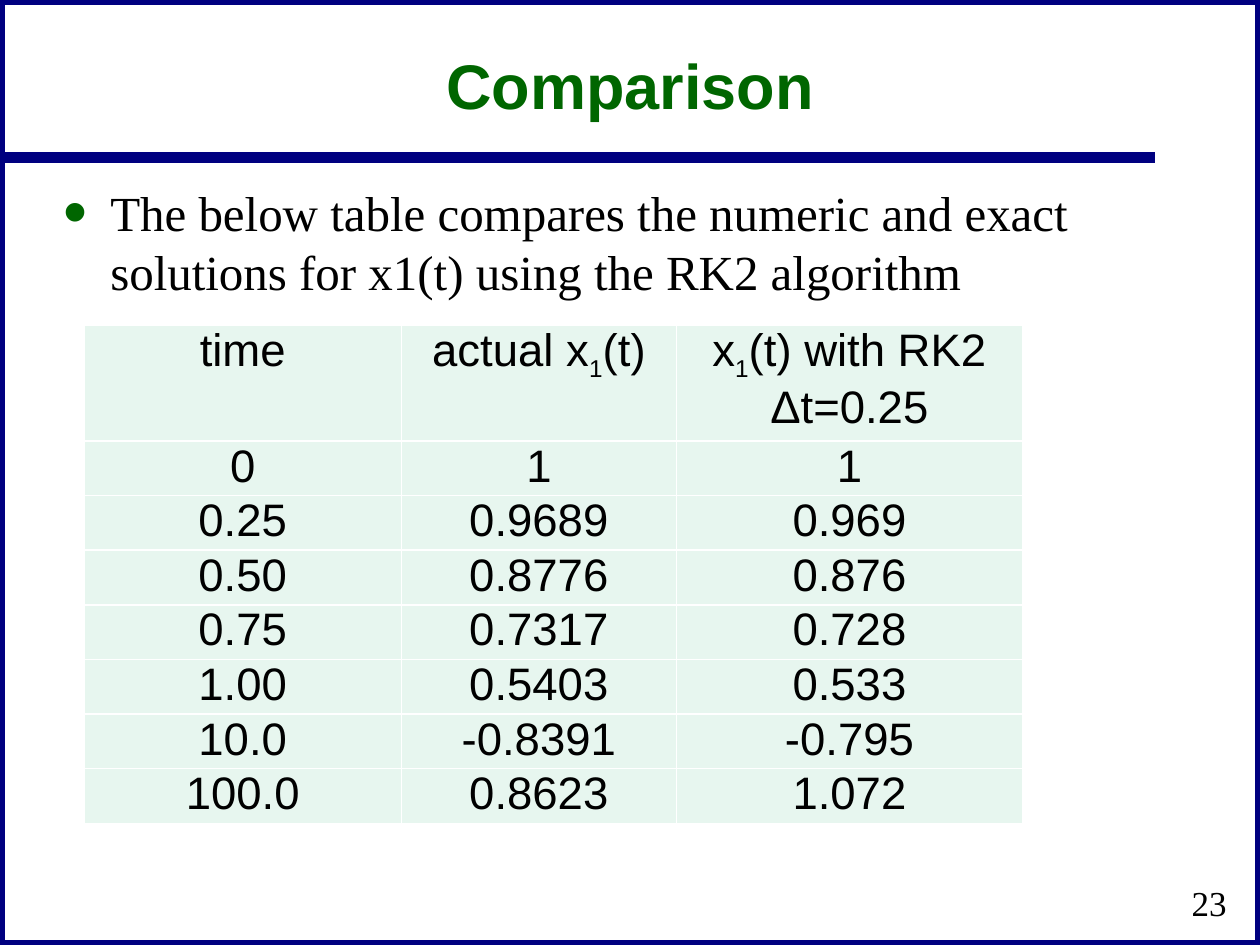
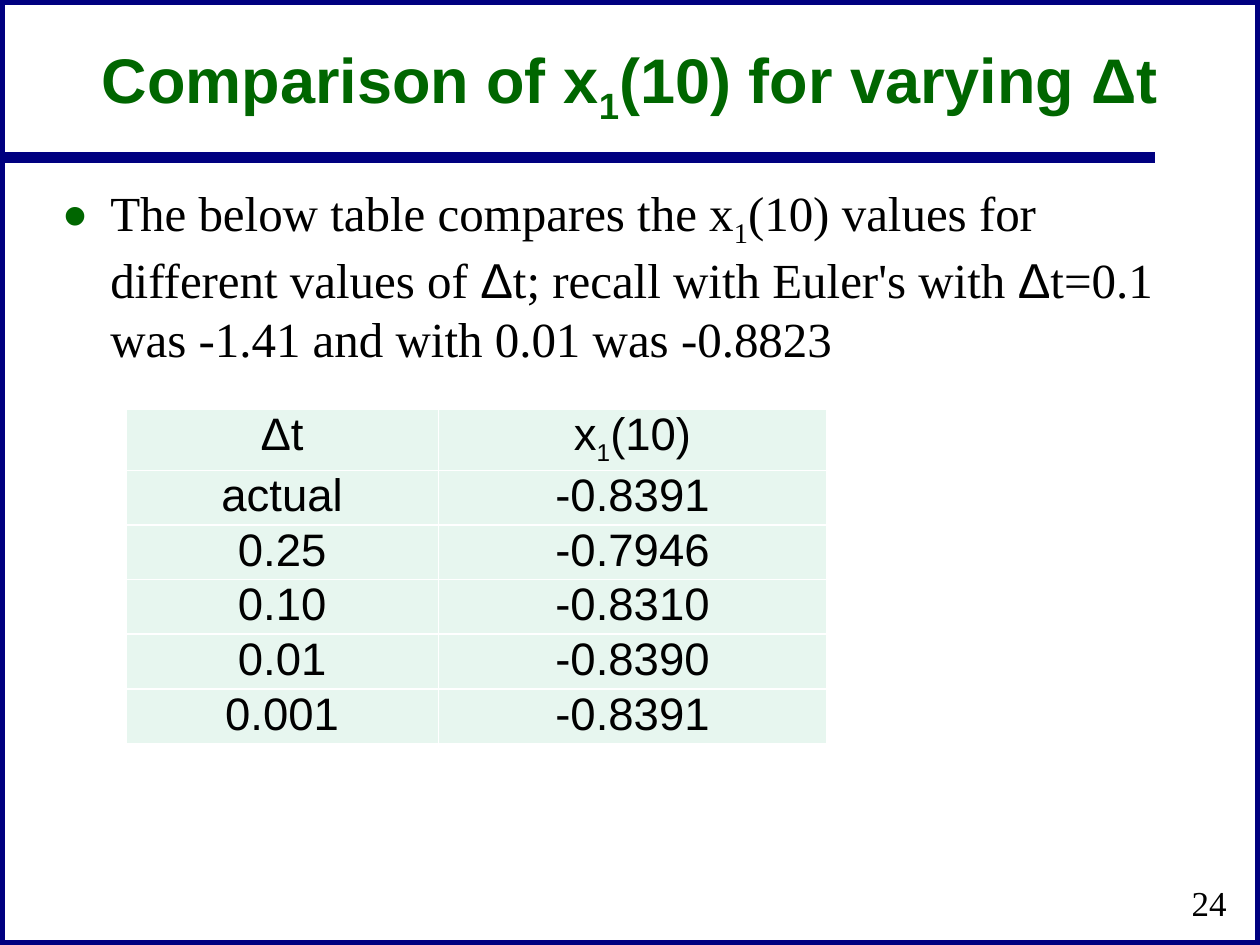
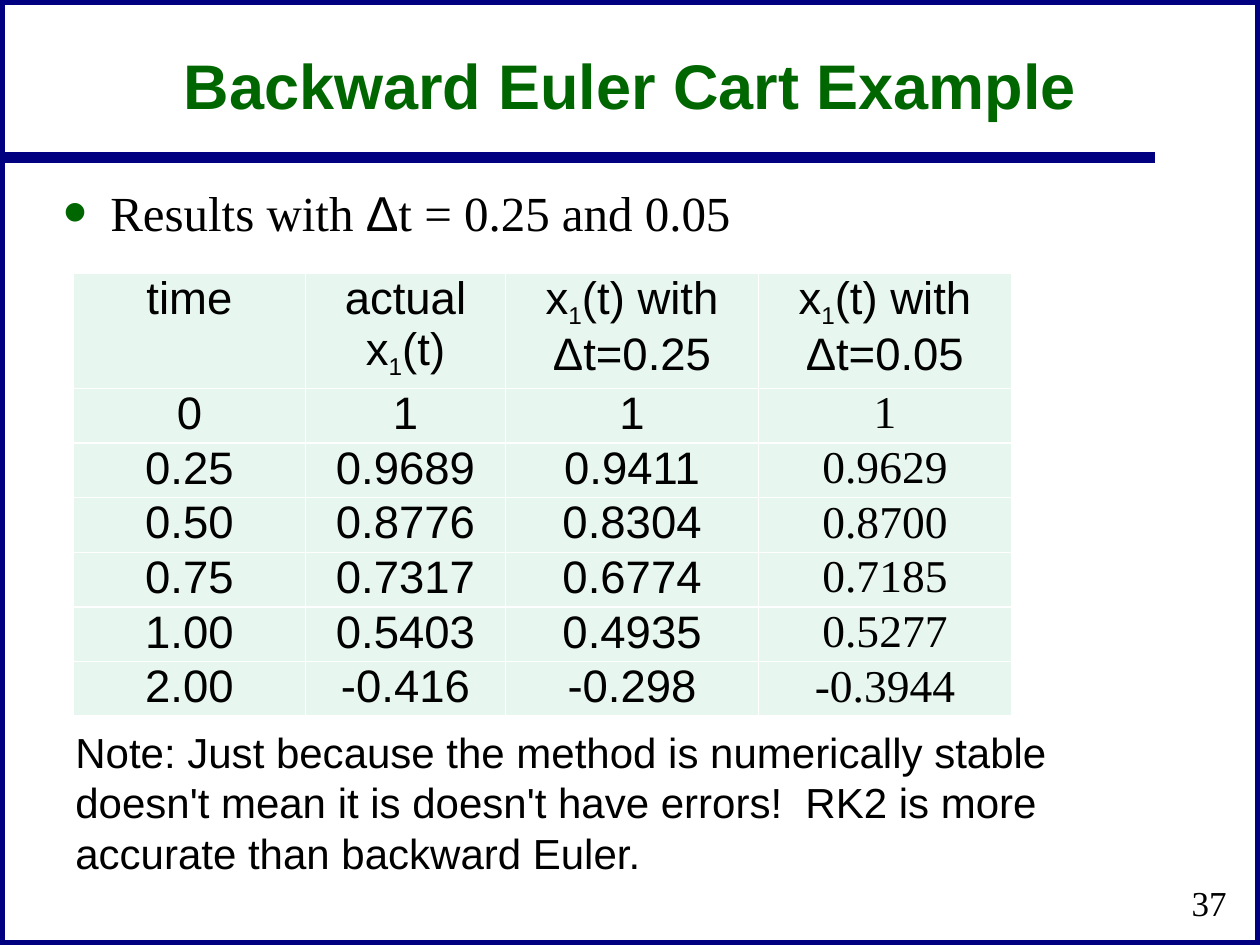
from itertools import groupby

from lxml import etree
from pptx import Presentation
from pptx.dml.color import RGBColor
from pptx.enum.shapes import MSO_CONNECTOR, MSO_SHAPE
from pptx.enum.text import MSO_ANCHOR, MSO_AUTO_SIZE, PP_ALIGN
from pptx.oxml.ns import qn
from pptx.util import Pt

LEFT, CENTER, RIGHT = PP_ALIGN.LEFT, PP_ALIGN.CENTER, PP_ALIGN.RIGHT
TOP, MIDDLE = MSO_ANCHOR.TOP, MSO_ANCHOR.MIDDLE
FIXED = MSO_AUTO_SIZE.NONE
RECT, STRAIGHT = MSO_SHAPE.RECTANGLE, MSO_CONNECTOR.STRAIGHT
SANS, SERIF = "Arial", "Times New Roman"
HUES = {"navy": "000080", "green": "006600", "black": "000000",
        "white": "FFFFFF", "mint": "E7F6EF"}
WIDE, HIGH = 720, 540


def color(name):
    return RGBColor.from_string(HUES[name])


def add_node(parent, tag, **attrs):
    return etree.SubElement(parent, qn(tag), attrs)


def write(frame, text, size=26, font=SANS, hue="black", bold=False,
          align=LEFT, anchor=TOP, small=None):
    """Fill a frame; ~ marks enclose subscripts and new lines make paragraphs."""
    frame.word_wrap = True
    frame.vertical_anchor = anchor
    for row, line in enumerate(text.split("\n")):
        para = frame.add_paragraph() if row else frame.paragraphs[0]
        para.alignment = align
        para.space_before = Pt(0)
        for part, piece in enumerate(line.split("~")):
            sub = part % 2 == 1
            for delta, chars in groupby(piece, lambda c: font == SERIF and c == "Δ"):
                run = para.add_run()
                run.text = "".join(chars)
                run.font.size = Pt(small if sub and small else size)
                run.font.name = SANS if delta else font
                run.font.bold = bold
                run.font.color.rgb = color(hue)
                if sub:
                    run.font._element.set("baseline", "-25000")


class Deck:
    """Holds the shared style and the current slide."""

    def __init__(self):
        self.show = Presentation()
        self.show.slide_width, self.show.slide_height = Pt(WIDE), Pt(HIGH)
        self.slide = None

    def start(self, title, number, left=54):
        self.slide = self.show.slides.add_slide(self.show.slide_layouts[1])
        self.frame()
        self.rule()
        self.title(title, left)
        self.text(str(number), 558, 498, 150, 36, size=20, font=SERIF,
                  align=RIGHT, anchor=MIDDLE)

    def frame(self):
        box = self.slide.shapes.add_shape(RECT, 0, 0, Pt(WIDE), Pt(HIGH))
        box.shadow.inherit = False
        box.fill.background()
        box.line.color.rgb = color("navy")
        box.line.width = Pt(6)

    def rule(self):
        line = self.slide.shapes.add_connector(STRAIGHT, 0, Pt(90), Pt(660), Pt(90))
        line.line.color.rgb = color("navy")
        line.line.width = Pt(6)
        add_node(line._element.spPr, "a:effectLst")

    def place(self, shape, left, top, width, height):
        shape.left, shape.top = Pt(left), Pt(top)
        shape.width, shape.height = Pt(width), Pt(height)
        shape.text_frame.auto_size = FIXED
        return shape.text_frame

    def title(self, text, left):
        frame = self.place(self.slide.shapes.title, left, 18, WIDE - 2 * left, 60)
        write(frame, text, size=36, hue="green", bold=True, align=CENTER, anchor=MIDDLE)

    def bullet(self, text, height):
        frame = self.place(self.slide.placeholders[1], 28.8, 100.8, 672.5, height)
        props = frame.paragraphs[0]._p.get_or_add_pPr()
        props.set("marL", str(Pt(27)))
        props.set("indent", str(Pt(-27)))
        add_node(add_node(props, "a:buClr"), "a:srgbClr", val=HUES["green"])
        add_node(props, "a:buSzPct", val="140000")
        add_node(props, "a:buFont", typeface=SANS)
        add_node(props, "a:buChar", char="•")
        write(frame, text, size=28, font=SERIF)

    def text(self, text, left, top, width, height, **style):
        box = self.slide.shapes.add_textbox(Pt(left), Pt(top), Pt(width), Pt(height))
        write(box.text_frame, text, **style)

    def table(self, rows, left, top, widths, height, last=SANS):
        """Add a table whose rows grow from zero to fit their text."""
        shape = self.slide.shapes.add_table(
            len(rows), len(widths), Pt(left), Pt(top), Pt(sum(widths)), Pt(height))
        grid = shape.table
        grid.first_row = grid.horz_banding = False
        for col, width in zip(grid.columns, widths):
            col.width = Pt(width)
        for r, row in enumerate(rows):
            grid.rows[r].height = 0
            for c, text in enumerate(row):
                final = r > 0 and c == len(row) - 1
                self.cell(grid.cell(r, c), text, last if final else SANS)
        shape.height = Pt(height)

    def cell(self, cell, text, font):
        cell.margin_left = cell.margin_right = Pt(5)
        cell.margin_top = cell.margin_bottom = 0
        props = cell._tc.get_or_add_tcPr()
        for side in "LRTB":
            edge = add_node(props, f"a:ln{side}", w=str(Pt(1)))
            add_node(add_node(edge, "a:solidFill"), "a:srgbClr", val=HUES["white"])
        cell.fill.solid()
        cell.fill.fore_color.rgb = color("mint")
        write(cell.text_frame, text, font=font, align=CENTER, small=24)


def main():
    deck = Deck()

    deck.start("Comparison", 23)
    deck.bullet("The below table compares the numeric and exact solutions "
                "for x1(t) using the RK2 algorithm", 91.5)
    deck.table([
        ("time", "actual x~1~(t)", "x~1~(t) with RK2\nΔt=0.25"),
        ("0", "1", "1"),
        ("0.25", "0.9689", "0.969"),
        ("0.50", "0.8776", "0.876"),
        ("0.75", "0.7317", "0.728"),
        ("1.00", "0.5403", "0.533"),
        ("10.0", "-0.8391", "-0.795"),
        ("100.0", "0.8623", "1.072"),
    ], 48, 186, (181.5, 157, 198), 281)

    deck.start("Comparison of x~1~(10) for varying Δt", 24, left=24)
    deck.bullet("The below table compares the x~1~(10) values for different values "
                "of Δt; recall with Euler's with Δt=0.1 was -1.41 and with 0.01 "
                "was -0.8823", 133)
    deck.table([
        ("Δt", "x~1~(10)"),
        ("actual", "-0.8391"),
        ("0.25", "-0.7946"),
        ("0.10", "-0.8310"),
        ("0.01", "-0.8390"),
        ("0.001", "-0.8391"),
    ], 72, 234, (178.5, 222), 187)

    deck.start("Backward Euler Cart Example", 37)
    deck.bullet("Results with Δt = 0.25 and 0.05", 324)
    deck.table([
        ("time", "actual x~1~(t)", "x~1~(t) with Δt=0.25", "x~1~(t) with Δt=0.05"),
        ("0", "1", "1", "1"),
        ("0.25", "0.9689", "0.9411", "0.9629"),
        ("0.50", "0.8776", "0.8304", "0.8700"),
        ("0.75", "0.7317", "0.6774", "0.7185"),
        ("1.00", "0.5403", "0.4935", "0.5277"),
        ("2.00", "-0.416", "-0.298", "-0.3944"),
    ], 42, 156, (132.5, 114.5, 144.5, 144.5), 250, last=SERIF)
    deck.text("Note: Just because the method is numerically stable "
              "doesn't mean it is doesn't have errors!  RK2 is more "
              "accurate than backward Euler.", 36, 411.5, 575, 94, size=24)

    deck.show.save("out.pptx")


if __name__ == "__main__":
    main()
